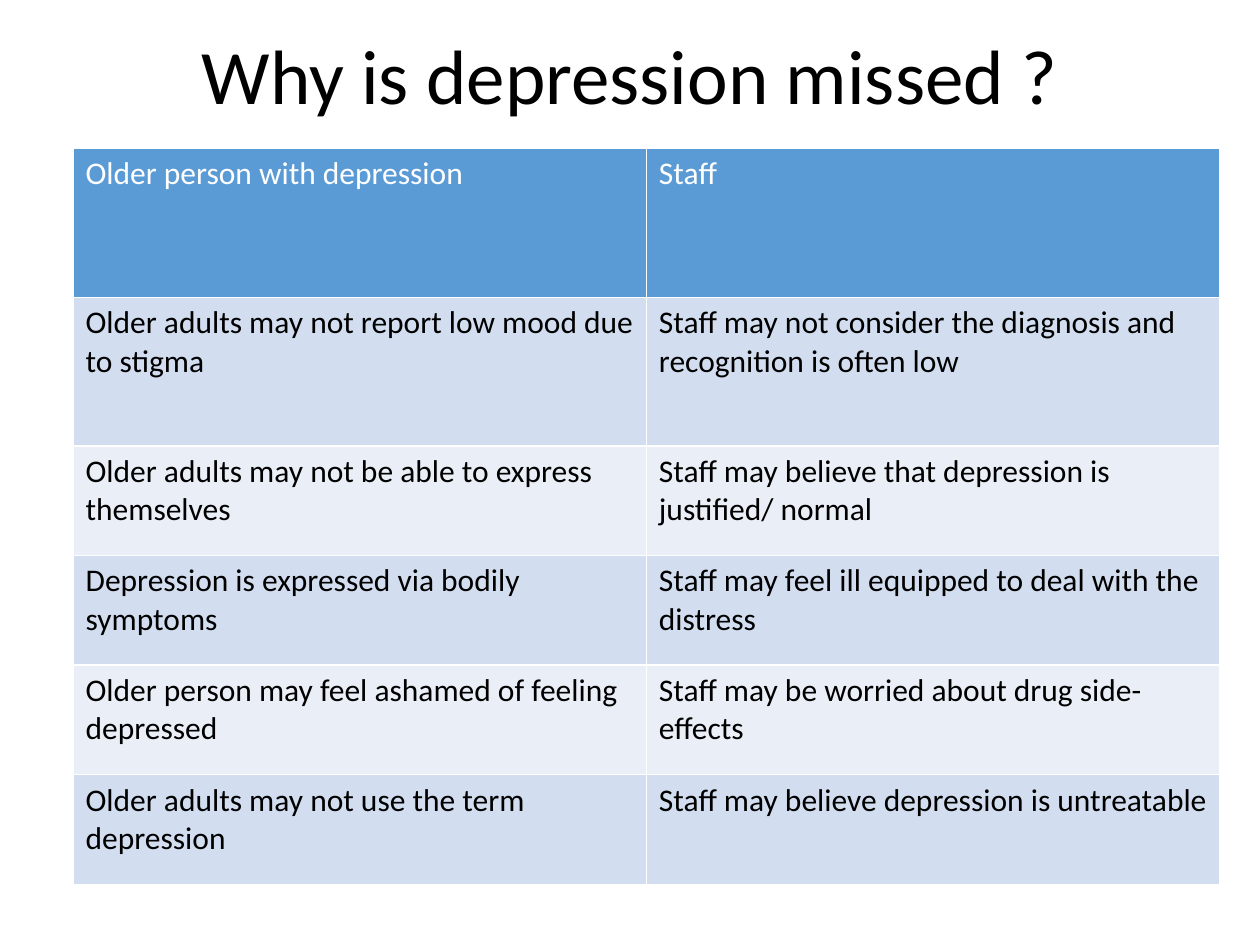
from pptx import Presentation
from pptx.dml.color import RGBColor
from pptx.enum.text import MSO_ANCHOR, PP_ALIGN
from pptx.util import Inches, Pt

CENTER = PP_ALIGN.CENTER
MIDDLE = MSO_ANCHOR.MIDDLE
TITLE_ONLY = 5

# Content
TITLE = "Why is depression missed ?"
ROWS = [
    ("Older person with depression", "Staff"),
    ("Older adults may not report low mood due to stigma",
     "Staff may not consider the diagnosis and recognition is often low"),
    ("Older adults may not be able to express themselves",
     "Staff may believe that depression is justified/ normal"),
    ("Depression is expressed via bodily symptoms",
     "Staff may feel ill equipped to deal with the distress"),
    ("Older person may feel ashamed of feeling depressed",
     "Staff may be worried about drug side-effects"),
    ("Older adults may not use the term depression",
     "Staff may believe depression is untreatable"),
]

# Layout and formats
TITLE_BOX = (0.69, 0, 8.62, 1.26)
TABLE_LEFT, TABLE_TOP = 0.58, 1.18
COLUMN_WIDTH = 4.55
ROW_HEIGHTS = [1.18] * 2 + [0.87] * 4
HEADER_FILL = "5B9BD5"
BAND_FILLS = ("D2DEEF", "EAEFF7")
TITLE_FONT = {"name": "Calibri", "size": Pt(44), "bold": False}
CELL_FONT = {"name": "Calibri", "size": Pt(18), "bold": False}


def color(value):
    return RGBColor.from_string(value)


def format_font(font, values, font_color):
    for name, value in values.items():
        setattr(font, name, value)
    font.color.rgb = color(font_color)


def add_title(slide):
    title = slide.shapes.title
    title.left, title.top, title.width, title.height = map(Inches, TITLE_BOX)
    frame = title.text_frame
    frame.text = TITLE
    frame.vertical_anchor = MIDDLE
    paragraph = frame.paragraphs[0]
    paragraph.alignment = CENTER
    paragraph.line_spacing = 0.9
    format_font(paragraph.runs[0].font, TITLE_FONT, "000000")


def add_reasons_table(slide):
    columns = len(ROWS[0])
    table = slide.shapes.add_table(
        len(ROWS), columns, Inches(TABLE_LEFT), Inches(TABLE_TOP),
        Inches(COLUMN_WIDTH * columns), Inches(sum(ROW_HEIGHTS))).table
    for column in table.columns:
        column.width = Inches(COLUMN_WIDTH)
    for row_index, texts in enumerate(ROWS):
        table.rows[row_index].height = Inches(ROW_HEIGHTS[row_index])
        is_header = row_index == 0
        fill = HEADER_FILL if is_header else BAND_FILLS[(row_index - 1) % 2]
        for column_index, text in enumerate(texts):
            cell = table.cell(row_index, column_index)
            cell.fill.solid()
            cell.fill.fore_color.rgb = color(fill)
            cell.text = text
            run = cell.text_frame.paragraphs[0].runs[0]
            format_font(run.font, CELL_FONT, "FFFFFF" if is_header else "000000")


def main():
    presentation = Presentation()
    presentation.slide_width = Inches(10)
    presentation.slide_height = Inches(7.5)
    slide = presentation.slides.add_slide(presentation.slide_layouts[TITLE_ONLY])
    add_title(slide)
    add_reasons_table(slide)
    presentation.save("out.pptx")


if __name__ == "__main__":
    main()
